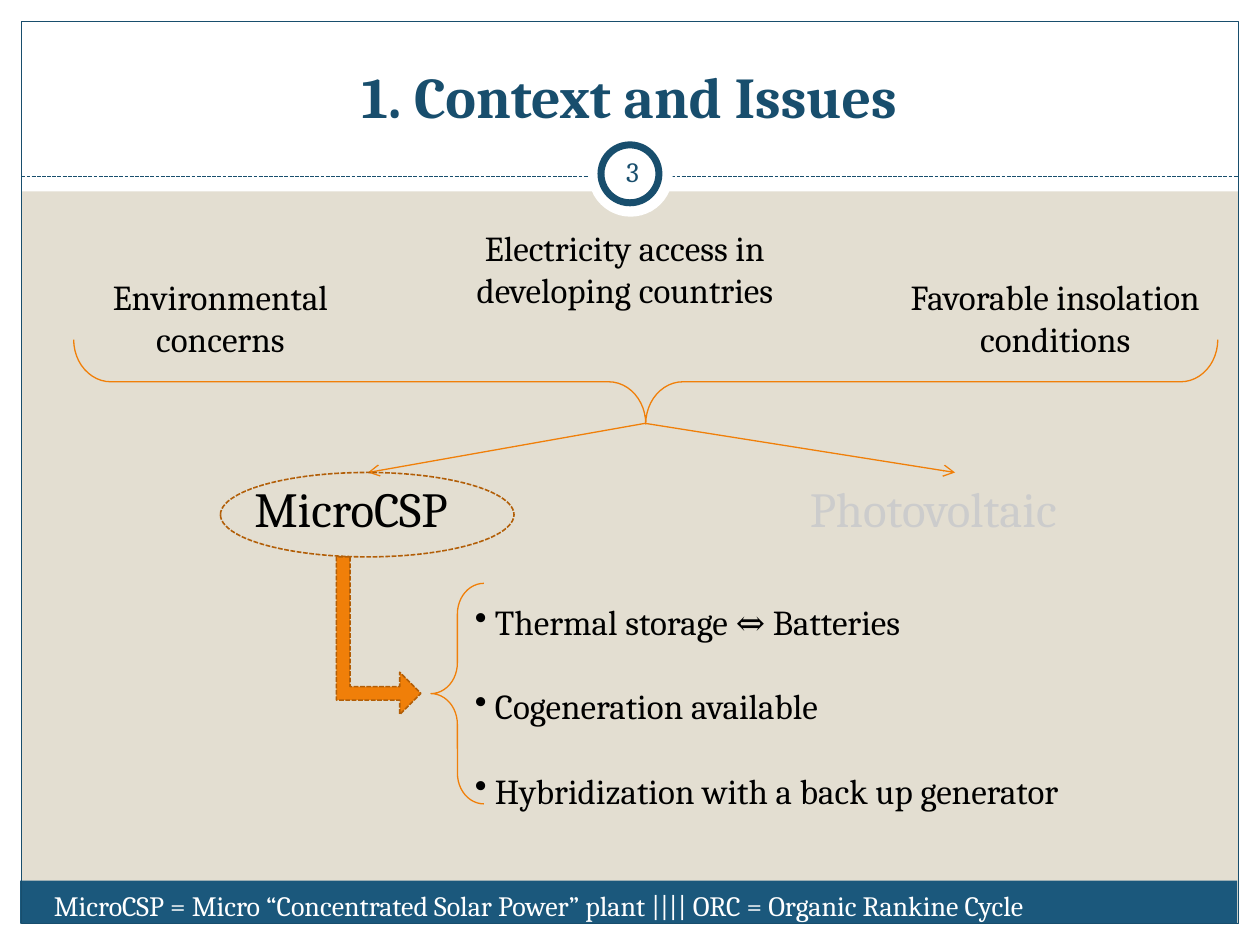
import pptx
import pptx.util
import pptx.dml.color
import pptx.enum.dml
import pptx.enum.shapes
import pptx.enum.text
import pptx.oxml.ns
import lxml.etree

Inches = pptx.util.Inches
Pt = pptx.util.Pt
SHAPE = pptx.enum.shapes.MSO_SHAPE
ALIGN = pptx.enum.text.PP_ALIGN
ANCHOR = pptx.enum.text.MSO_ANCHOR
qn = pptx.oxml.ns.qn

NAVY, BLUE, SAND, WHITE, BLACK = "184E6D", "1B587C", "E3DED1", "FFFFFF", "000000"
ORANGE, BROWN, GREY = "F07F09", "B25E07", "CCCCCC"


def rgb(value):
    return pptx.dml.color.RGBColor.from_string(value)


class SlideBuilder:
    font = "Cambria"

    def __init__(self, slide, background):
        self.slide = slide
        slide.background.fill.solid()
        slide.background.fill.fore_color.rgb = rgb(background)

    def style_line(self, line, color, width, dashed):
        line.color.rgb = rgb(color)
        line.width = Pt(width)
        if dashed:
            line.dash_style = pptx.enum.dml.MSO_LINE.SQUARE_DOT

    def shape(self, kind, left, top, width, height, fill=None, line=None,
              weight=0.75, dashed=False, rotation=0, adjust=()):
        shape = self.slide.shapes.add_shape(
            kind, Inches(left), Inches(top), Inches(width), Inches(height))
        shape.shadow.inherit = False
        shape.rotation = rotation
        for index, value in enumerate(adjust):
            shape.adjustments[index] = value
        if fill:
            shape.fill.solid()
            shape.fill.fore_color.rgb = rgb(fill)
        else:
            shape.fill.background()
        if line:
            self.style_line(shape.line, line, weight, dashed)
        else:
            shape.line.fill.background()

    def line(self, start, end, color, dashed=False, arrow=False):
        connector = self.slide.shapes.add_connector(
            pptx.enum.shapes.MSO_CONNECTOR.STRAIGHT,
            *[Inches(value) for value in (*start, *end)])
        self.style_line(connector.line, color, 0.75, dashed)
        if arrow:
            outline = connector.line._get_or_add_ln()
            lxml.etree.SubElement(outline, qn("a:tailEnd"), type="arrow")
        properties = connector._element.spPr
        lxml.etree.SubElement(properties, qn("a:effectLst"))

    def text(self, left, top, width, height, lines, size=20, color=BLACK,
             bold=False, align=ALIGN.LEFT, anchor=ANCHOR.TOP, inset=0.1,
             bullet_indent=0, gap=0):
        box = self.slide.shapes.add_textbox(
            Inches(left), Inches(top), Inches(width), Inches(height))
        frame = box.text_frame
        frame.word_wrap = True
        frame.vertical_anchor = anchor
        frame.margin_left = frame.margin_right = Inches(inset)
        frame.text = "\n".join(lines)
        for index, paragraph in enumerate(frame.paragraphs):
            paragraph.alignment = align
            paragraph.font.name = self.font
            paragraph.font.size = Pt(size)
            paragraph.font.bold = bold
            paragraph.font.color.rgb = rgb(color)
            if index and gap:
                paragraph.space_before = Pt(gap)
            if bullet_indent:
                self.bullet(paragraph, bullet_indent)

    def bullet(self, paragraph, indent):
        properties = paragraph._p.get_or_add_pPr()
        properties.set("marL", str(Inches(indent)))
        properties.set("indent", str(-Inches(indent)))
        mark = lxml.etree.Element(qn("a:buChar"), char="•")
        properties.find(qn("a:defRPr")).addprevious(mark)


def main():
    deck = pptx.Presentation()
    deck.slide_width, deck.slide_height = Inches(10), Inches(7.5)
    page = SlideBuilder(deck.slides.add_slide(deck.slide_layouts[6]), SAND)

    # White margins, footer band and frame
    for margin in ((0, 7.33, 10, 0.17), (0, 0, 10, 1.52),
                   (0, 0, 0.17, 7.5), (9.83, 0, 0.17, 7.5)):
        page.shape(SHAPE.RECTANGLE, *margin, fill=WHITE)
    page.shape(SHAPE.RECTANGLE, 0.16, 6.99, 9.66, 0.34, fill=BLUE)
    page.shape(SHAPE.RECTANGLE, 0.17, 0.17, 9.66, 7.16, line=NAVY)

    # Title, divider and page number
    page.line((0.17, 1.4), (9.83, 1.4), NAVY, dashed=True)
    page.shape(SHAPE.OVAL, 4.67, 1.05, 0.67, 0.67, fill=WHITE)
    page.shape(SHAPE.OVAL, 4.77, 1.15, 0.46, 0.46, fill=WHITE, line=NAVY, weight=4)
    page.text(0.33, 0.25, 9.33, 0.83, ["1. Context and Issues"], size=33,
              color=NAVY, bold=True, align=ALIGN.CENTER, anchor=ANCHOR.BOTTOM)
    page.text(4.77, 1.12, 0.5, 0.48, ["3"], size=16, color=NAVY,
              align=ALIGN.CENTER, anchor=ANCHOR.MIDDLE, inset=0.05)

    # Three drivers gathered by a brace
    for left, top, width, height, driver in (
            (0.5, 2.14, 2.5, 0.77, "Environmental concerns"),
            (3.67, 1.75, 2.58, 1.11, "Electricity access in developing countries"),
            (7, 2.14, 2.75, 0.77, "Favorable insolation conditions")):
        page.text(left, top, width, height, [driver], align=ALIGN.CENTER)
    page.shape(SHAPE.LEFT_BRACE, 4.79, -1.51, 0.67, 9.08, line=ORANGE,
               rotation=270, adjust=(0.44, 0.5))

    # Two technologies
    for left, width, target, technology, color in (
            (1.92, 2, 2.92, "MicroCSP", BLACK),
            (6.33, 2.5, 7.58, "Photovoltaic", GREY)):
        page.text(left, 3.75, width, 0.57, [technology], size=28, color=color)
        page.line((5.12, 3.36), (target, 3.75), ORANGE, arrow=True)
    page.shape(SHAPE.OVAL, 1.75, 3.75, 2.33, 0.67, line=BROWN, weight=0.9, dashed=True)

    # Advantages of the chosen technology
    page.shape(SHAPE.BENT_UP_ARROW, 2.38, 4.71, 1.25, 0.67, fill=ORANGE, line=BROWN,
               weight=0.9, dashed=True, rotation=90, adjust=(0.16, 0.25, 0.25))
    page.shape(SHAPE.LEFT_BRACE, 3.42, 4.63, 0.42, 1.75, line=ORANGE, adjust=(0.58, 0.5))
    page.text(3.67, 4.72, 5.33, 1.78,
              ["Thermal storage ⇔ Batteries", "Cogeneration available",
               "Hybridization with a back up generator"],
              bullet_indent=0.16, gap=24)

    # Abbreviations in the footer
    page.text(0.33, 7, 9.67, 0.37,
              ["MicroCSP = Micro “Concentrated Solar Power” plant |||| "
               "ORC = Organic Rankine Cycle"], size=16, color=WHITE)

    deck.save("out.pptx")


if __name__ == "__main__":
    main()
